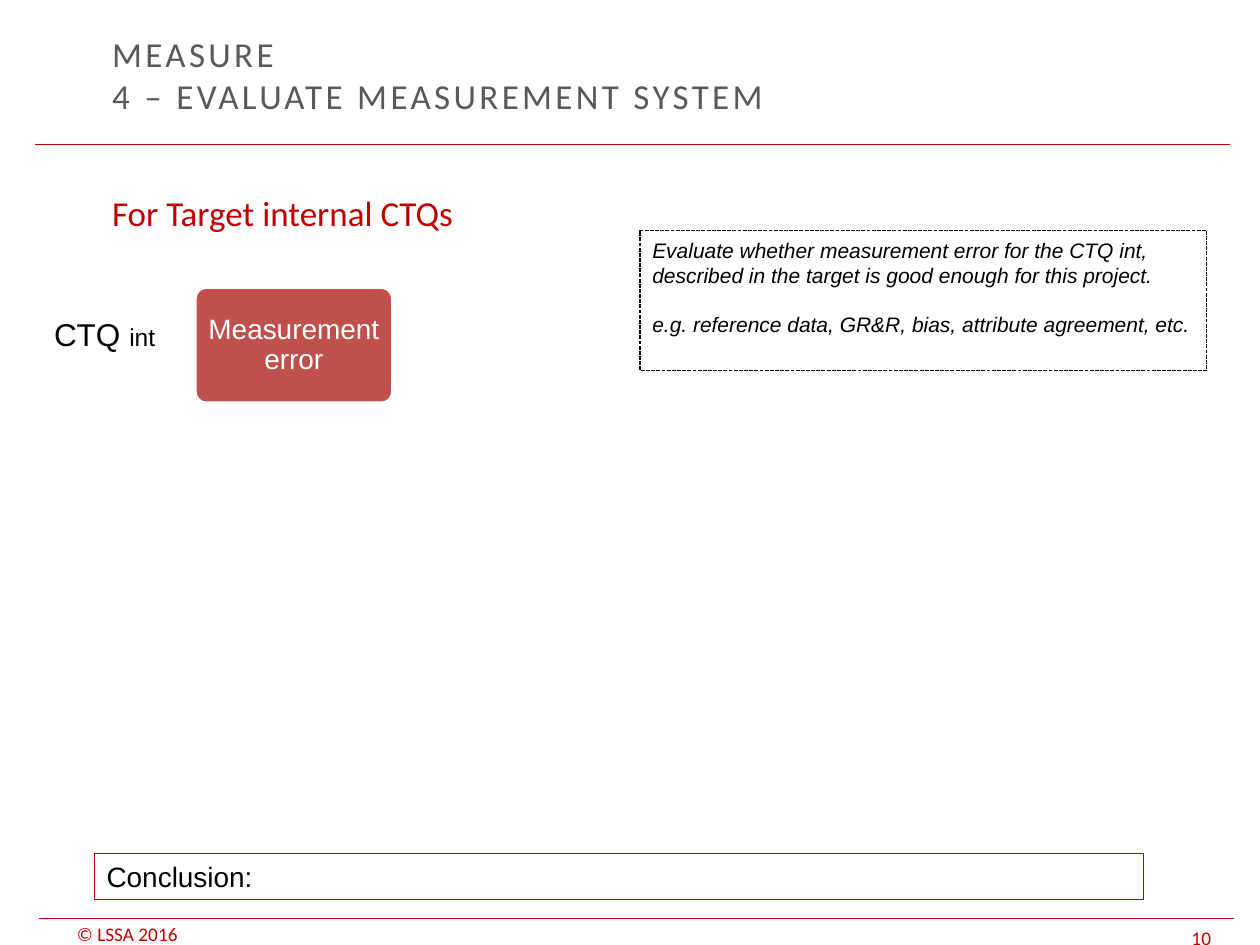
from pptx import Presentation
from pptx.dml.color import RGBColor
from pptx.enum.dml import MSO_LINE
from pptx.enum.shapes import MSO_CONNECTOR, MSO_SHAPE
from pptx.enum.text import MSO_ANCHOR, PP_ALIGN
from pptx.oxml.ns import qn
from pptx.util import Cm, Pt
from lxml.etree import SubElement

RED, BLACK, WHITE = "C00000", "000000", "FFFFFF"


def rgb(value):
    """Turn a hex string into a colour."""
    return RGBColor.from_string(value)


def add_text(p, text, size=12, color=BLACK, font="Arial", italic=False, spacing=0):
    """Append formatted text to a paragraph, breaking lines at newlines."""
    for i, line in enumerate(text.split("\n")):
        if i:
            p.add_line_break()
        r = p.add_run()
        r.text = line
        r.font.size, r.font.name, r.font.italic = Pt(size), font, italic
        r.font.color.rgb = rgb(color)
        if spacing:
            r._r.get_or_add_rPr().set("spc", str(int(spacing * 100)))


def set_frame(sp, anchor=MSO_ANCHOR.TOP, inset_x=0.25, inset_y=0.13):
    """Set wrapping, anchor and insets, and return the first paragraph."""
    tf = sp.text_frame
    tf.word_wrap, tf.vertical_anchor = True, anchor
    tf.margin_left = tf.margin_right = Cm(inset_x)
    tf.margin_top = tf.margin_bottom = Cm(inset_y)
    p = tf.paragraphs[0]
    p.alignment = PP_ALIGN.LEFT
    return p


def add_label(s, x, y, w, h, **frame):
    """Add a text box and return its first paragraph."""
    return set_frame(s.shapes.add_textbox(Cm(x), Cm(y), Cm(w), Cm(h)), **frame)


def add_box(s, x, y, w, h, kind=MSO_SHAPE.RECTANGLE, fill=None, line=RED, width=0.75):
    """Add a shape with the given fill and outline."""
    sp = s.shapes.add_shape(kind, Cm(x), Cm(y), Cm(w), Cm(h))
    sp.shadow.inherit = False
    if fill:
        sp.fill.solid()
        sp.fill.fore_color.rgb = rgb(fill)
    else:
        sp.fill.background()
    sp.line.color.rgb, sp.line.width = rgb(line), Pt(width)
    return sp


def add_rule(s, x, y, w):
    """Add a thin red horizontal line."""
    c = s.shapes.add_connector(MSO_CONNECTOR.STRAIGHT, Cm(x), Cm(y), Cm(x + w), Cm(y))
    c.line.color.rgb, c.line.width = rgb(RED), Pt(0.75)
    SubElement(c._element.spPr, qn("a:effectLst"))


def add_header(s, x, y, w):
    """Place the title and the rule below it."""
    add_rule(s, x, y + 2.26, w)
    p = add_label(s, x + 1.3, y, 18, 1.68, anchor=MSO_ANCHOR.MIDDLE)
    add_text(p, "MEASURE\n4 – EVALUATE MEASUREMENT SYSTEM", size=20,
             color="595959", font="Calibri", spacing=1.9)


def add_footer(s, x, y, w):
    """Place the rule, the copyright line and the page number."""
    add_rule(s, x, y, w)
    for text, dx, dy, width in (("© LSSA 2016", 0.51, 0.08, 3.6), ("10", 22.98, 0.15, 1.63)):
        p = add_label(s, x + dx, y + dy, width, 0.46, anchor=MSO_ANCHOR.BOTTOM, inset_y=0)
        add_text(p, text, size=11, color=RED, font="Calibri")


def add_body(s, x, y, w, h):
    """Place the subtitle."""
    add_text(add_label(s, x, y, w, h), "For Target internal CTQs",
             size=20, color=RED, font="Calibri")


def add_note(s, x, y, w, h):
    """Place the dashed guidance box."""
    sp = add_box(s, x, y, w, h, fill=WHITE, line=BLACK)
    sp.line.dash_style = MSO_LINE.SQUARE_DOT
    p = set_frame(sp)
    add_text(p, "Evaluate whether measurement error for the CTQ int, "
                "described in the target is good enough for this project.", italic=True)
    p = sp.text_frame.add_paragraph()
    p.alignment, p.space_before = PP_ALIGN.LEFT, Pt(14)
    add_text(p, "e.g. reference data, GR&R, bias, attribute agreement, etc.", italic=True)


def add_ctq(s, x, y, w, h):
    """Place the CTQ label and its measurement error box."""
    p = add_label(s, x, y + 0.43, 3.81, 1.02)
    add_text(p, "CTQ ", size=18)
    add_text(p, "int", size=14)
    sp = add_box(s, x + w - 3.99, y, 3.99, h, kind=MSO_SHAPE.ROUNDED_RECTANGLE,
                 fill="C0504D", line=WHITE, width=2)
    sp.adjustments[0] = 0.1
    p = set_frame(sp, anchor=MSO_ANCHOR.MIDDLE, inset_x=0.18, inset_y=0.25)
    p.alignment, p.line_spacing = PP_ALIGN.CENTER, 0.9
    add_text(p, "Measurement error", size=16, color=WHITE)


def add_conclusion(s, x, y, w, h):
    """Place the conclusion box."""
    add_text(set_frame(add_box(s, x, y, w, h)), "Conclusion:", size=16)


def main():
    """Build and save the slide."""
    prs = Presentation()
    prs.slide_width, prs.slide_height = Cm(25.4), Cm(19.05)
    s = prs.slides.add_slide(prs.slide_layouts[6])
    add_footer(s, 0.79, 18.52, 24.08)
    add_header(s, 0.71, 0.66, 24.08)
    add_body(s, 2.01, 3.73, 22, 14)
    add_note(s, 12.9, 4.65, 11.43, 2.82)
    add_conclusion(s, 1.9, 17.2, 21.16, 0.94)
    add_ctq(s, 0.84, 5.79, 7.08, 2.34)
    prs.save("out.pptx")


if __name__ == "__main__":
    main()
